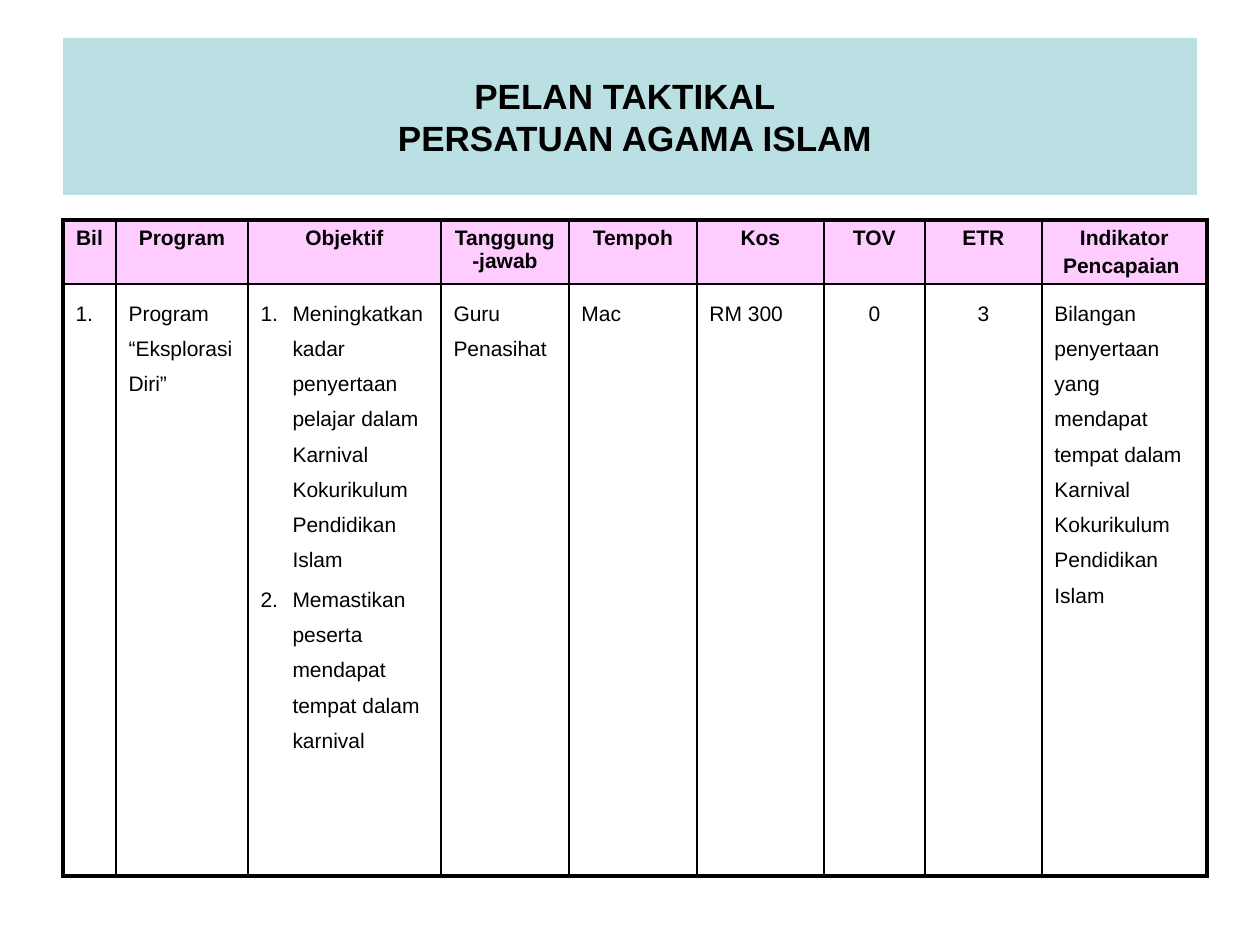
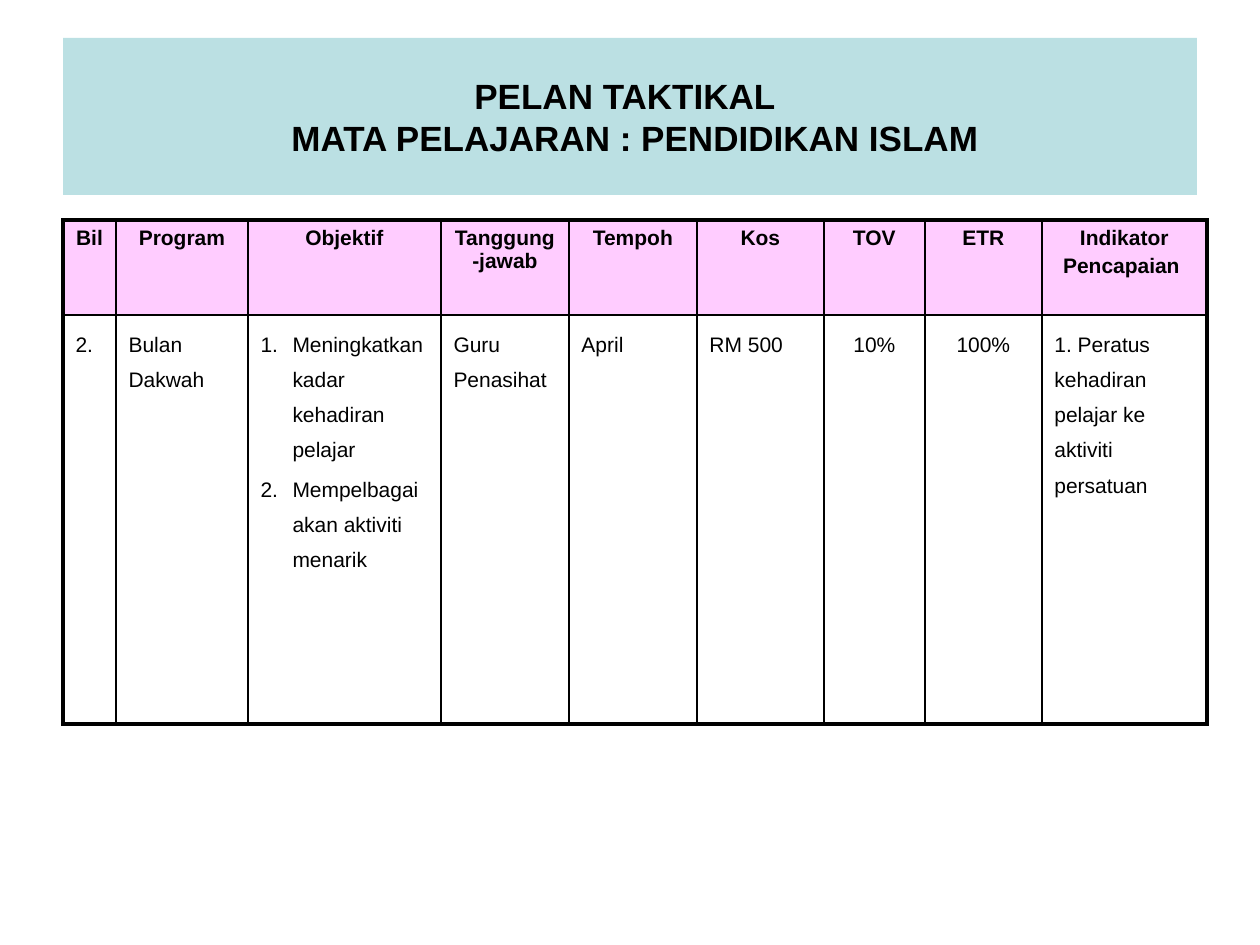
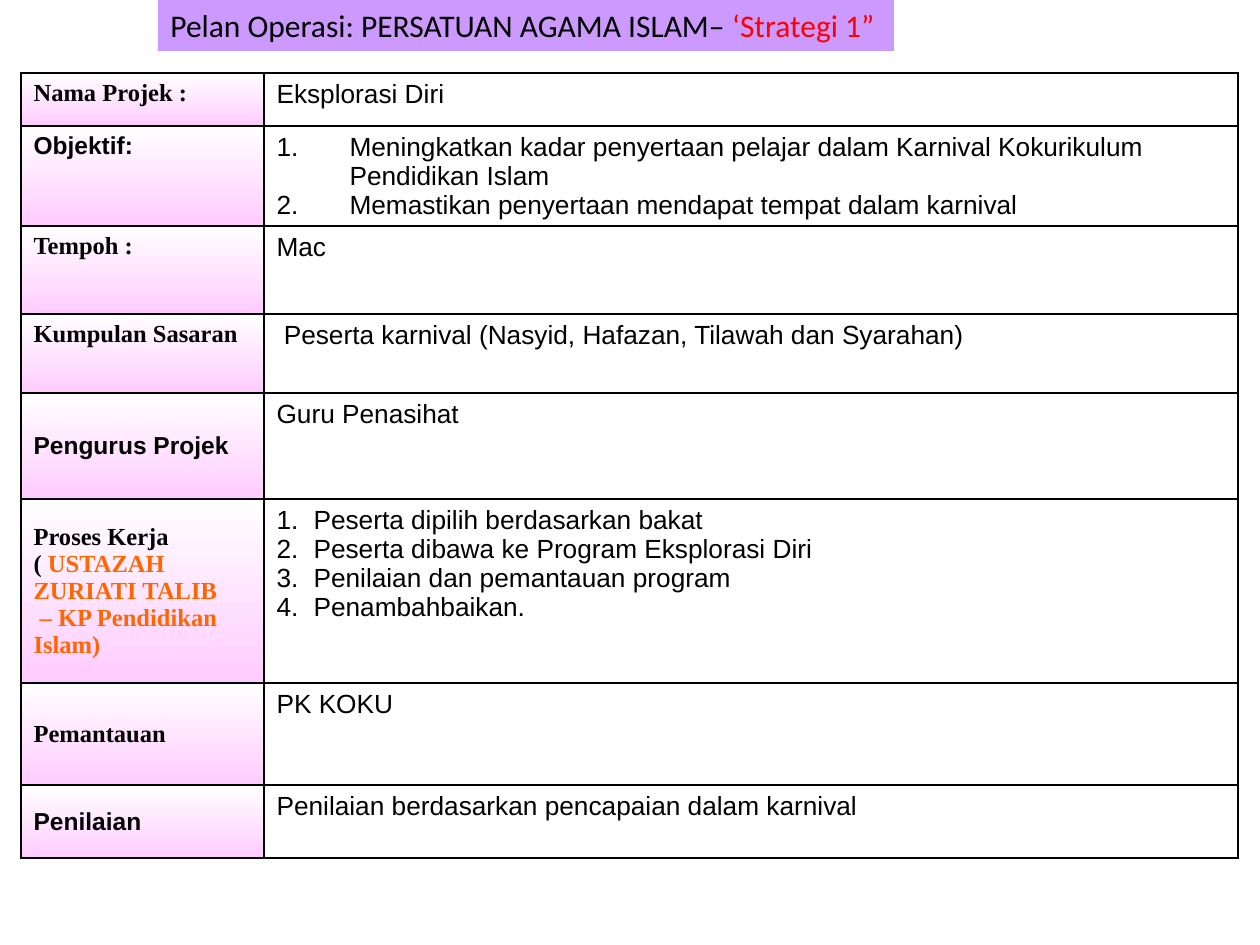
from lxml import etree
from pptx import Presentation
from pptx.dml.color import RGBColor
from pptx.enum import shapes, text
from pptx.oxml.ns import qn
from pptx.util import Emu, Inches, Pt

COLORS = {"black": "000000", "band": "BBE0E3", "pink": "FFCCFF", "white": "FFFFFF",
          "purple": "CC99FF", "red": "FF0000", "orange": "FF6600"}
SERIF = "Times New Roman"
THIN, THICK = 1, 2.25
CENTER = text.PP_ALIGN.CENTER

HEADERS = [["Bil"], ["Program"], ["Objektif"], ["Tanggung-jawab"], ["Tempoh"], ["Kos"],
           ["TOV"], ["ETR"], ["Indikator", "Pencapaian "]]
PLAN_COLS = [53, 132, 193, 128, 128, 127, 101, 117, 165]
OBJECTIVE_COL, CENTERED_COLS = 2, (6, 7)

PLANS = [
    {"title": "PERSATUAN AGAMA ISLAM", "rows": [58, 592], "cells": [
        ["1."], ["Program “Eksplorasi Diri”"],
        ["Meningkatkan kadar penyertaan pelajar dalam Karnival Kokurikulum Pendidikan Islam",
         "Memastikan peserta mendapat tempat dalam karnival"],
        ["Guru Penasihat"], ["Mac"], ["RM 300"], ["0"], ["3"],
        ["Bilangan penyertaan yang mendapat tempat dalam Karnival Kokurikulum "
         "Pendidikan Islam"]]},
    {"title": "MATA PELAJARAN : PENDIDIKAN ISLAM", "rows": [95, 409], "cells": [
        ["2."], ["Bulan Dakwah"],
        ["Meningkatkan kadar kehadiran pelajar", "Mempelbagaiakan aktiviti menarik"],
        ["Guru Penasihat"], ["April"], ["RM 500"], ["10%"], ["100%"],
        ["1. Peratus kehadiran pelajar ke aktiviti persatuan"]]},
]

HEADING = [("Pelan Operasi: PERSATUAN AGAMA ISLAM– ", {}), ("‘Strategi 1”", {"color": "red"})]
ORANGE = {"color": "orange"}
PROJECT_COLS = [243, 974]
PROJECT = [
    {"h": 53, "label": ["Nama Projek :"], "font": SERIF, "value": ["Eksplorasi Diri"]},
    {"h": 88, "label": ["Objektif:"], "font": "Arial", "hang": 73, "value": [
        "Meningkatkan kadar penyertaan pelajar dalam Karnival Kokurikulum Pendidikan Islam",
        "Memastikan penyertaan mendapat tempat dalam karnival"]},
    {"h": 88, "label": ["Tempoh :"], "font": SERIF, "value": ["Mac"]},
    {"h": 79, "label": ["Kumpulan Sasaran"], "font": SERIF,
     "value": [" Peserta karnival (Nasyid, Hafazan, Tilawah dan Syarahan)"]},
    {"h": 106, "label": ["Pengurus Projek"], "font": "Arial", "middle": True,
     "value": ["Guru Penasihat"]},
    {"h": 184, "label": ["Proses Kerja", [("( ", {}), ("USTAZAH ZURIATI TALIB", ORANGE)],
                         [(" – KP Pendidikan Islam)", ORANGE)]],
     "font": SERIF, "middle": True, "hang": 37, "value": [
         "Peserta dipilih berdasarkan bakat", "Peserta dibawa ke Program Eksplorasi Diri",
         "Penilaian dan pemantauan program", "Penambahbaikan."]},
    {"h": 102, "label": ["Pemantauan"], "font": SERIF, "middle": True, "value": ["PK KOKU"]},
    {"h": 73, "label": ["Penilaian"], "font": "Arial", "middle": True,
     "value": ["Penilaian berdasarkan pencapaian dalam karnival"]},
]


def px(n):
    return Emu(round(n * Inches(1) / 126))


def rgb(name):
    return RGBColor.from_string(COLORS[name])


def paint(sp, color):
    sp.fill.solid()
    sp.fill.fore_color.rgb = rgb(color)


def write(tf, paras, size, name="Arial", bold=False, hang=0, **para_format):
    for i, runs in enumerate(paras):
        p = tf.paragraphs[0] if i == 0 else tf.add_paragraph()
        for key, value in para_format.items():
            setattr(p, key, value)
        if hang:
            pPr = p._p.get_or_add_pPr()
            pPr.set("marL", str(px(hang)))
            pPr.set("indent", str(-px(hang)))
            etree.SubElement(pPr, qn("a:buFont"), typeface="+mj-lt")
            etree.SubElement(pPr, qn("a:buAutoNum"), type="arabicPeriod")
        for words, extra in [(runs, {})] if isinstance(runs, str) else runs:
            r = p.add_run()
            r.text = words
            for key, value in {"size": Pt(size), "name": name, "bold": bold}.items():
                setattr(r.font, key, value)
            r.font.color.rgb = rgb(extra.get("color", "black"))


def add_table(s, left, top, cols, rows, outer):
    frame = s.shapes.add_table(len(rows), len(cols), px(left), px(top),
                               px(sum(cols)), px(sum(rows)))
    table = frame.table
    table.first_row = table.horz_banding = False
    for column, w in zip(table.columns, cols):
        column.width = px(w)
    for row, h in zip(table.rows, rows):
        row.height = px(h)
    for i in range(len(rows)):
        for j in range(len(cols)):
            cell = table.cell(i, j)
            tcPr = cell._tc.get_or_add_tcPr()
            edges = {"lnL": j == 0, "lnR": j == len(cols) - 1,
                     "lnT": i == 0, "lnB": i == len(rows) - 1}
            for tag, is_outer in edges.items():
                ln = etree.SubElement(tcPr, qn("a:" + tag),
                                      w=str(Pt(outer if is_outer else THIN)))
                fill = etree.SubElement(ln, qn("a:solidFill"))
                etree.SubElement(fill, qn("a:srgbClr"), val=COLORS["black"])
            cell.fill.background()
    return table


def add_title(s, subject):
    sp = s.shapes.title
    box = {"left": 63, "top": 38, "width": 1134, "height": 157}
    for key, value in box.items():
        setattr(sp, key, px(value))
    paint(sp, "band")
    tf = sp.text_frame
    tf.vertical_anchor = text.MSO_ANCHOR.MIDDLE
    tf.auto_size = text.MSO_AUTO_SIZE.NONE
    write(tf, ["PELAN TAKTIKAL", subject], 20, bold=True, alignment=CENTER)
    for p, side, shift in zip(tf.paragraphs, ("marR", "marL"), (10, 20)):
        p._p.get_or_add_pPr().set(side, str(px(shift)))


def add_plan(prs, plan):
    s = prs.slides.add_slide(prs.slide_layouts[5])
    add_title(s, plan["title"])
    table = add_table(s, 63, 220, PLAN_COLS, plan["rows"], THICK)
    for j, (header, paras) in enumerate(zip(HEADERS, plan["cells"])):
        head, body = table.cell(0, j), table.cell(1, j)
        paint(head, "pink")
        write(head.text_frame, header, 12, bold=True, alignment=CENTER, space_before=Pt(2.4))
        write(body.text_frame, paras, 12, hang=32 if j == OBJECTIVE_COL else 0,
              alignment=CENTER if j in CENTERED_COLS else text.PP_ALIGN.LEFT,
              line_spacing=1.5, space_before=Pt(2.4))


def add_project(prs):
    s = prs.slides.add_slide(prs.slide_layouts[6])
    table = add_table(s, 21, 73, PROJECT_COLS, [row["h"] for row in PROJECT], THIN)
    for i, row in enumerate(PROJECT):
        label, value = table.cell(i, 0), table.cell(i, 1)
        label.fill.gradient()
        label.fill.gradient_angle = 270
        for stop, color in zip(label.fill.gradient_stops, ("white", "pink")):
            stop.color.rgb = rgb(color)
        if row.get("middle"):
            label.vertical_anchor = text.MSO_ANCHOR.MIDDLE
        write(label.text_frame, row["label"], 14, row["font"], bold=True)
        write(value.text_frame, row["value"], 15, hang=row.get("hang", 0))
    heading = s.shapes.add_textbox(px(158), 0, px(736), px(51))
    paint(heading, "purple")
    tf = heading.text_frame
    tf.word_wrap = False
    tf.auto_size = text.MSO_AUTO_SIZE.SHAPE_TO_FIT_TEXT
    write(tf, [HEADING], 18, "Calibri")


def main():
    prs = Presentation()
    prs.slide_width, prs.slide_height = px(1260), px(945)
    for plan in PLANS:
        add_plan(prs, plan)
    add_project(prs)
    prs.save("out.pptx")


if __name__ == "__main__":
    main()
